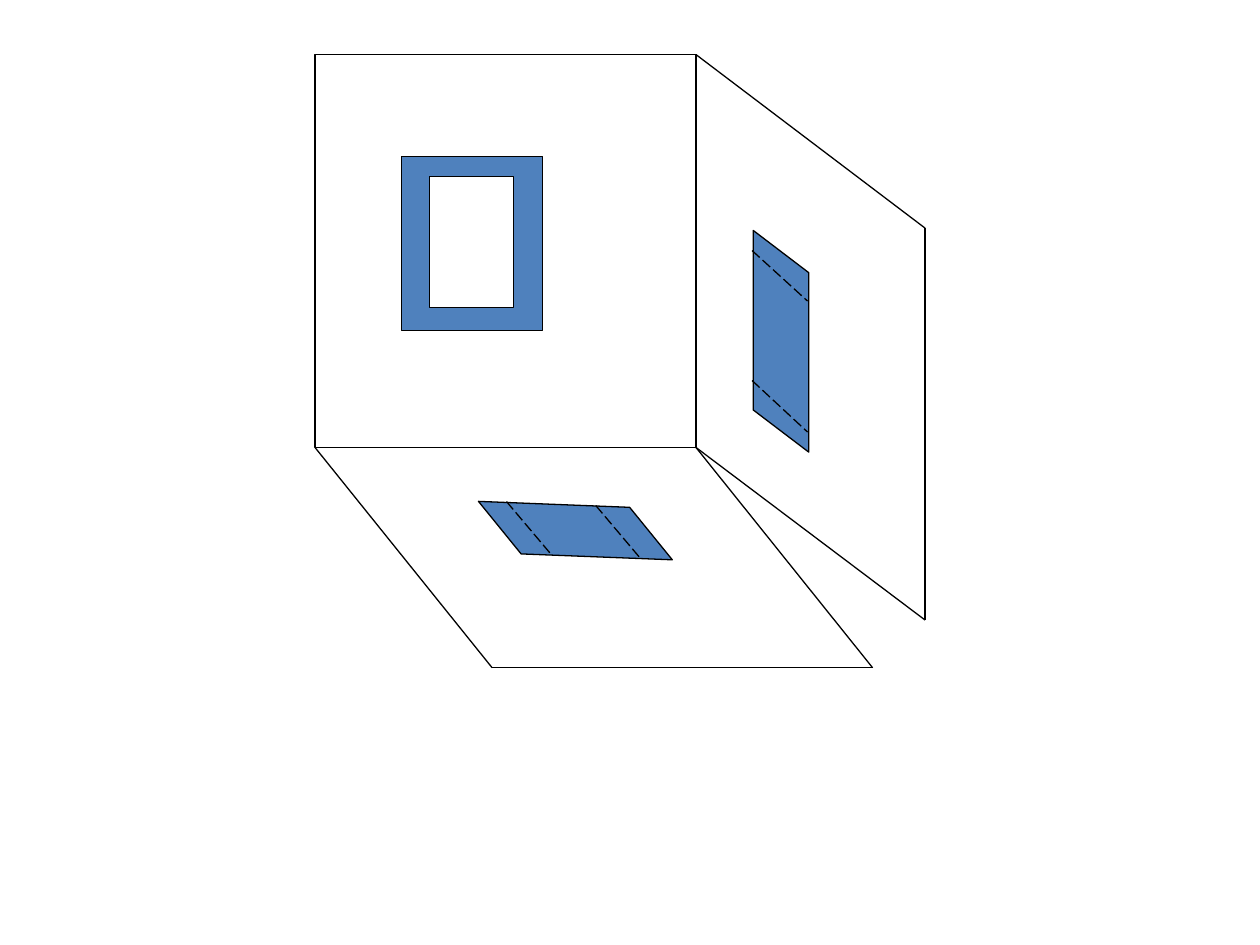
from lxml import etree
from pptx import Presentation
from pptx.dml.color import RGBColor
from pptx.enum.dml import MSO_LINE
from pptx.enum.shapes import MSO_CONNECTOR, MSO_SHAPE
from pptx.oxml.ns import qn
from pptx.util import Cm, Pt

BLACK = RGBColor(0x00, 0x00, 0x00)
WHITE = RGBColor(0xFF, 0xFF, 0xFF)
BLUE = RGBColor(0x4F, 0x81, 0xBD)
STRAIGHT = MSO_CONNECTOR.STRAIGHT
RECTANGLE = MSO_SHAPE.RECTANGLE
PARALLELOGRAM = MSO_SHAPE.PARALLELOGRAM
LONG_DASH = MSO_LINE.LONG_DASH

LEFT, RIGHT, TOP, FLOOR = 6.35, 14.03, 1.1, 9.02
SIDE_X, SIDE_TOP, SIDE_BOTTOM = 18.65, 4.6, 12.5
BASE_LEFT, BASE_RIGHT, BASE_Y = 9.92, 17.59, 13.46
SIDE_SLOT_X, SIDE_SLOT_END = 15.16, 16.28


class Projection:
    """Draws outlined shapes and lines on one slide, in centimetres."""

    def __init__(self, page, line_width=0.75):
        self.page = page
        self.line_width = Pt(line_width)

    def outline(self, line):
        line.color.rgb = BLACK
        line.width = self.line_width

    def line(self, start, end, dash=None):
        connector = self.page.shapes.add_connector(
            STRAIGHT, *(Cm(value) for value in (*start, *end)))
        self.outline(connector.line)
        if dash is not None:
            connector.line.dash_style = dash
        etree.SubElement(connector._element.spPr, qn("a:effectLst"))

    def shape(self, kind, bounds, fill=None, rotation=0, slant=None, group=None):
        owner = group or self.page
        shape = owner.shapes.add_shape(kind, *(Cm(value) for value in bounds))
        shape.shadow.inherit = False
        shape.rotation = rotation
        if slant is not None:
            shape.adjustments[0] = slant
        if fill is None:
            shape.fill.background()
        else:
            shape.fill.solid()
            shape.fill.fore_color.rgb = fill
        self.outline(shape.line)

    def frame(self, outer, inner):
        group = self.page.shapes.add_group_shape()
        self.shape(RECTANGLE, outer, BLUE, group=group)
        self.shape(RECTANGLE, inner, WHITE, group=group)


def main():
    deck = Presentation()
    deck.slide_width, deck.slide_height = Cm(25.4), Cm(19.05)
    drawing = Projection(deck.slides.add_slide(deck.slide_layouts[6]))

    drawing.shape(RECTANGLE, (LEFT, TOP, RIGHT - LEFT, FLOOR - TOP))
    drawing.frame((8.1, 3.15, 2.84, 3.51), (8.66, 3.56, 1.7, 2.64))

    corner = (RIGHT, FLOOR)
    side_top, side_bottom = (SIDE_X, SIDE_TOP), (SIDE_X, SIDE_BOTTOM)
    base_left, base_right = (BASE_LEFT, BASE_Y), (BASE_RIGHT, BASE_Y)
    for start, end in (
        ((RIGHT, TOP), side_top),
        (side_top, side_bottom),
        (corner, side_bottom),
        ((LEFT, FLOOR), base_left),
        (base_left, base_right),
        (corner, base_right),
    ):
        drawing.line(start, end)

    drawing.shape(PARALLELOGRAM, (13.51, 6.32, 4.47, 1.12), BLUE, 270, 0.76)
    drawing.shape(PARALLELOGRAM, (9.91, 9.55, 3.38, 2.29), BLUE, 230.9, 0.88)

    for start_y, end_y in ((5.05, 6.07), (7.67, 8.71)):
        drawing.line((SIDE_SLOT_X, start_y), (SIDE_SLOT_END, end_y), LONG_DASH)
    for x, y in ((10.21, 10.11), (12.01, 10.19)):
        drawing.line((x, y), (x + 0.92, y + 1.09), LONG_DASH)

    deck.save("out.pptx")


if __name__ == "__main__":
    main()
